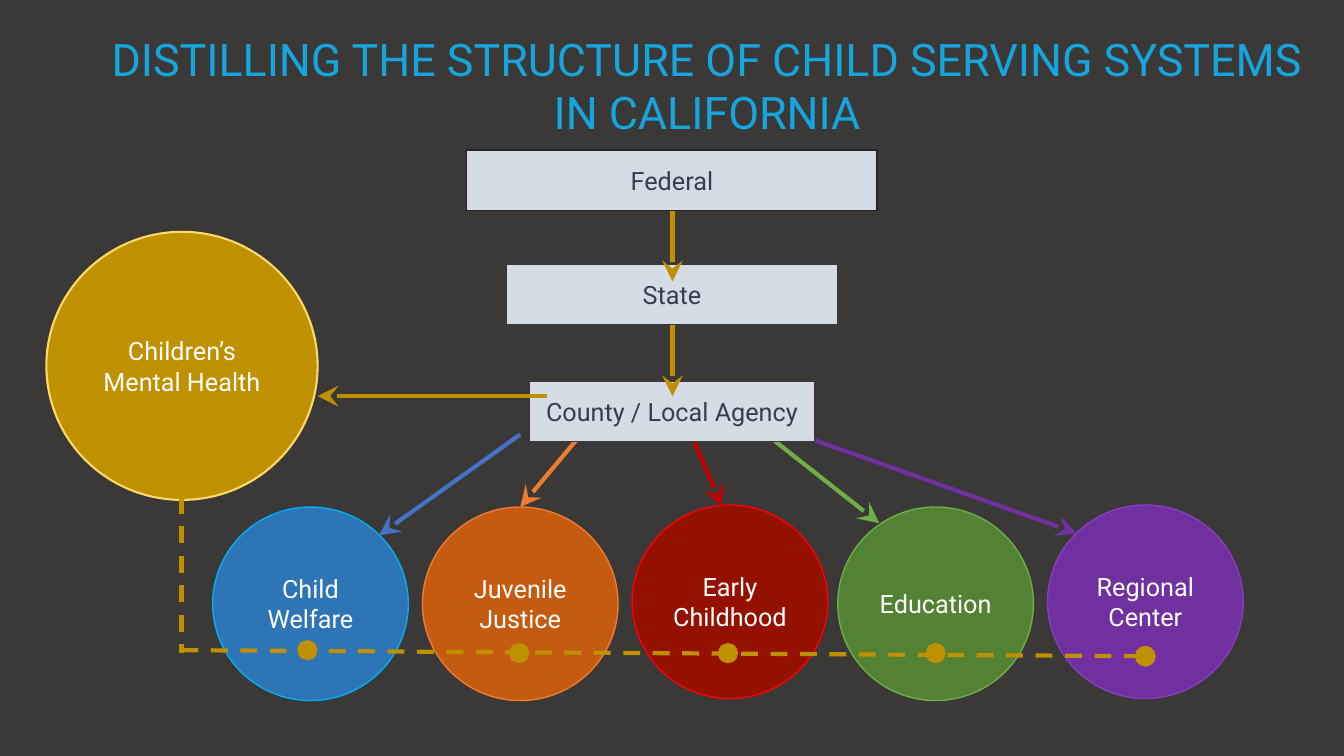
from dataclasses import dataclass
from typing import Optional

from lxml.etree import SubElement
from pptx import Presentation
from pptx.dml.color import RGBColor
from pptx.enum.dml import MSO_LINE
from pptx.enum.shapes import MSO_CONNECTOR, MSO_SHAPE
from pptx.enum.text import MSO_ANCHOR, MSO_AUTO_SIZE, PP_ALIGN
from pptx.oxml.ns import qn
from pptx.util import Emu, Pt

PX = 9144  # EMU per px, 100 px to the inch
FONT = "Roboto"

BACKGROUND = RGBColor(0x3B, 0x38, 0x38)
TITLE_BLUE = RGBColor(0x15, 0xA6, 0xDF)
WHITE = RGBColor(0xFF, 0xFF, 0xFF)
SLATE = RGBColor(0x33, 0x3F, 0x50)
PALE = RGBColor(0xD6, 0xDC, 0xE5)
CHARCOAL = RGBColor(0x26, 0x26, 0x26)
GOLD = RGBColor(0xBF, 0x90, 0x00)
LIGHT_GOLD = RGBColor(0xFF, 0xD9, 0x66)
BLUE = RGBColor(0x2E, 0x75, 0xB6)
CYAN = RGBColor(0x00, 0xB0, 0xF0)
ARROW_BLUE = RGBColor(0x44, 0x72, 0xC4)
RUST = RGBColor(0xC5, 0x5A, 0x11)
ORANGE = RGBColor(0xED, 0x7D, 0x31)
MAROON = RGBColor(0x94, 0x11, 0x00)
RED = RGBColor(0xFF, 0x00, 0x00)
ARROW_RED = RGBColor(0xC0, 0x00, 0x00)
GREEN = RGBColor(0x54, 0x82, 0x35)
LIGHT_GREEN = RGBColor(0x70, 0xAD, 0x47)
PURPLE = RGBColor(0x70, 0x30, 0xA0)
LIGHT_PURPLE = RGBColor(0x86, 0x3E, 0xBF)


@dataclass
class Node:
    left: int
    top: int
    width: int
    height: int
    fill: RGBColor
    outline: Optional[RGBColor] = None
    text: str = ""
    text_color: RGBColor = WHITE
    kind: MSO_SHAPE = MSO_SHAPE.OVAL
    outline_width: float = 1
    side_inset: int = 10


@dataclass
class Link:
    start: tuple[int, int]
    end: tuple[int, int]
    color: RGBColor = GOLD
    head: Optional[str] = "stealth"
    dashed: bool = False


def system(left: int, top: int, text: str, fill: RGBColor, outline: RGBColor,
           side_inset: int = 10) -> Node:
    return Node(left, top, 194, 192, fill, outline, text, side_inset=side_inset)


def level(left: int, top: int, width: int, text: str, outline: RGBColor) -> Node:
    return Node(left, top, width, 60, PALE, outline, text, SLATE, MSO_SHAPE.RECTANGLE)


def dot(left: int, top: int) -> Node:
    return Node(left, top, 20, 20, GOLD)


SYSTEMS = [
    system(211, 503, "Child Welfare", BLUE, CYAN),
    system(419, 503, "Juvenile Justice", RUST, ORANGE),
    system(627, 501, "Early Childhood", MAROON, RED, side_inset=0),
    system(831, 503, "Education", GREEN, LIGHT_GREEN),
    system(1039, 501, "Regional Center", PURPLE, LIGHT_PURPLE),
]
MENTAL_HEALTH = Node(46, 230, 269, 266, GOLD, LIGHT_GOLD,
                     "Children’s Mental Health", outline_width=1.5)
SYSTEM_ARROWS = [
    Link((516, 431), (376, 531), ARROW_BLUE),
    Link((578, 429), (516, 503), ORANGE),
    Link((688, 437), (716, 502), ARROW_RED),
    Link((764, 434), (872, 519), LIGHT_GREEN),
    Link((775, 425), (1068, 529), PURPLE),
]
LEVELS = [
    level(463, 149, 407, "Federal", CHARCOAL),
    level(502, 262, 329, "State", BACKGROUND),
    level(525, 378, 283, "County / Local Agency", BACKGROUND),
]
GOLD_LINKS = [
    Link((667, 209), (667, 279)),
    Link((667, 322), (667, 393)),
    Link((543, 393), (315, 393)),
    Link((180, 493), (180, 648), head=None, dashed=True),
    Link((180, 645), (1136, 651), head="oval", dashed=True),
]
DOTS = [dot(295, 635), dot(505, 638), dot(712, 638), dot(918, 638)]


def px(length: int) -> Emu:
    return Emu(length * PX)


def draw_node(page, node: Node) -> None:
    shape = page.shapes.add_shape(node.kind, px(node.left), px(node.top),
                                  px(node.width), px(node.height))
    shape.shadow.inherit = False
    shape.fill.solid()
    shape.fill.fore_color.rgb = node.fill
    if node.outline is None:
        shape.line.fill.background()
    else:
        shape.line.color.rgb = node.outline
        shape.line.width = Pt(node.outline_width)
    if node.text:
        frame = shape.text_frame
        frame.word_wrap = True
        frame.vertical_anchor = MSO_ANCHOR.MIDDLE
        frame.margin_left = frame.margin_right = px(node.side_inset)
        write(frame, node.text, 18, node.text_color)


def write(frame, text: str, size: int, color: RGBColor) -> None:
    frame.text = text
    para = frame.paragraphs[0]
    para.alignment = PP_ALIGN.CENTER
    para.line_spacing = 1.0
    para.font.name = FONT
    para.font.size = Pt(size)
    para.font.color.rgb = color


def draw_link(page, link: Link) -> None:
    connector = page.shapes.add_connector(
        MSO_CONNECTOR.STRAIGHT, *map(px, link.start + link.end))
    connector.line.color.rgb = link.color
    connector.line.width = Pt(3)
    if link.dashed:
        connector.line.dash_style = MSO_LINE.DASH
    if link.head:
        SubElement(connector.line._get_or_add_ln(), qn("a:tailEnd"),
                   type=link.head, w="lg", len="lg")
    SubElement(connector._element.spPr, qn("a:effectLst"))


def main() -> None:
    deck = Presentation()
    deck.slide_width, deck.slide_height = px(1333), px(750)
    page = deck.slides.add_slide(deck.slide_layouts[5])
    page.background.fill.solid()
    page.background.fill.fore_color.rgb = BACKGROUND

    # Title
    title = page.shapes.title
    title.left, title.top, title.width, title.height = map(px, (94, 26, 1215, 118))
    title.text_frame.word_wrap = True
    title.text_frame.auto_size = MSO_AUTO_SIZE.NONE
    title.text_frame.vertical_anchor = MSO_ANCHOR.TOP
    write(title.text_frame,
          "DISTILLING THE STRUCTURE OF CHILD SERVING SYSTEMS IN CALIFORNIA",
          32, TITLE_BLUE)

    # Systems, then the levels above them, then the mental health thread
    for node in [*SYSTEMS, MENTAL_HEALTH]:
        draw_node(page, node)
    for link in SYSTEM_ARROWS:
        draw_link(page, link)
    for node in LEVELS:
        draw_node(page, node)
    for link in GOLD_LINKS:
        draw_link(page, link)
    for node in DOTS:
        draw_node(page, node)

    deck.save("out.pptx")


if __name__ == "__main__":
    main()
